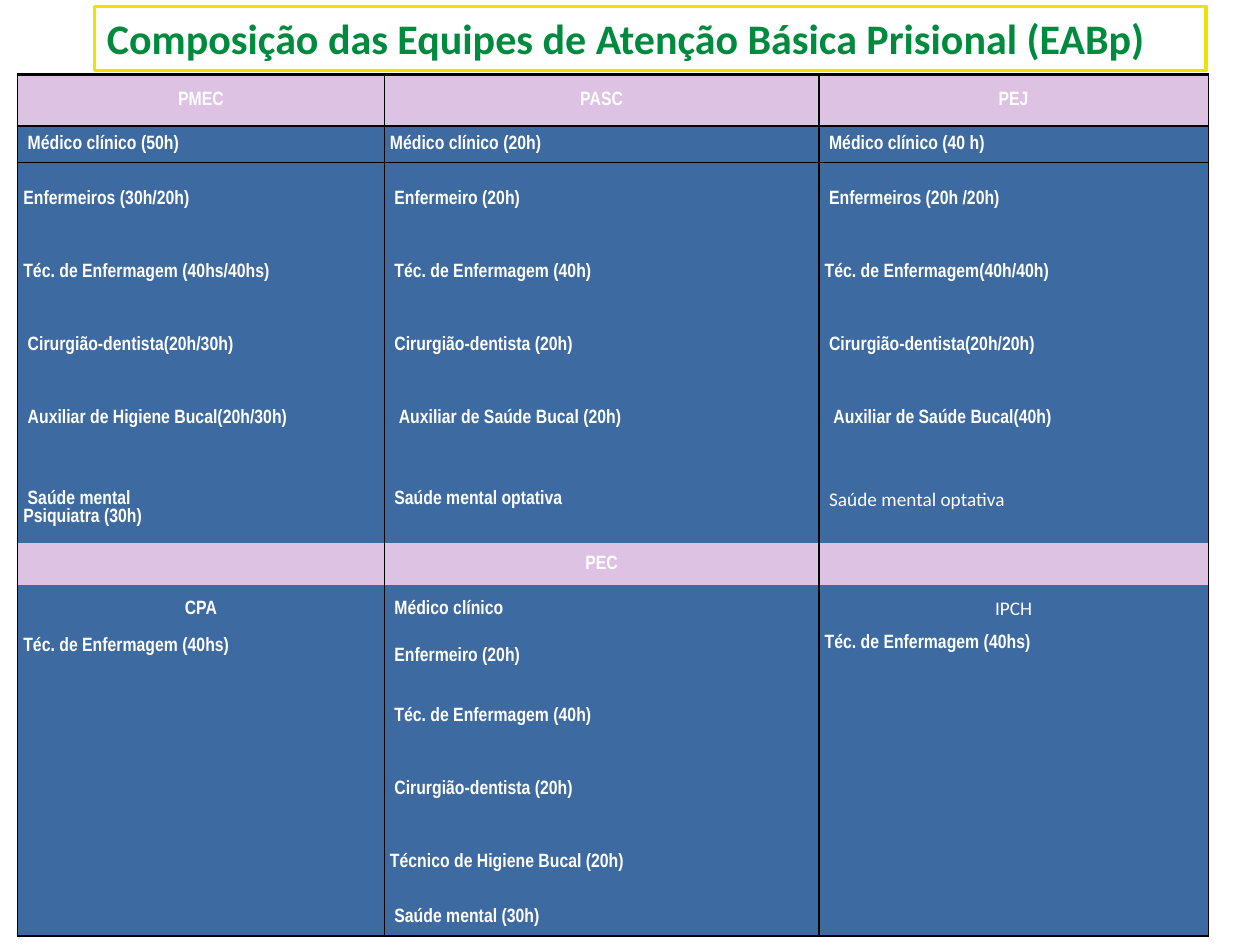
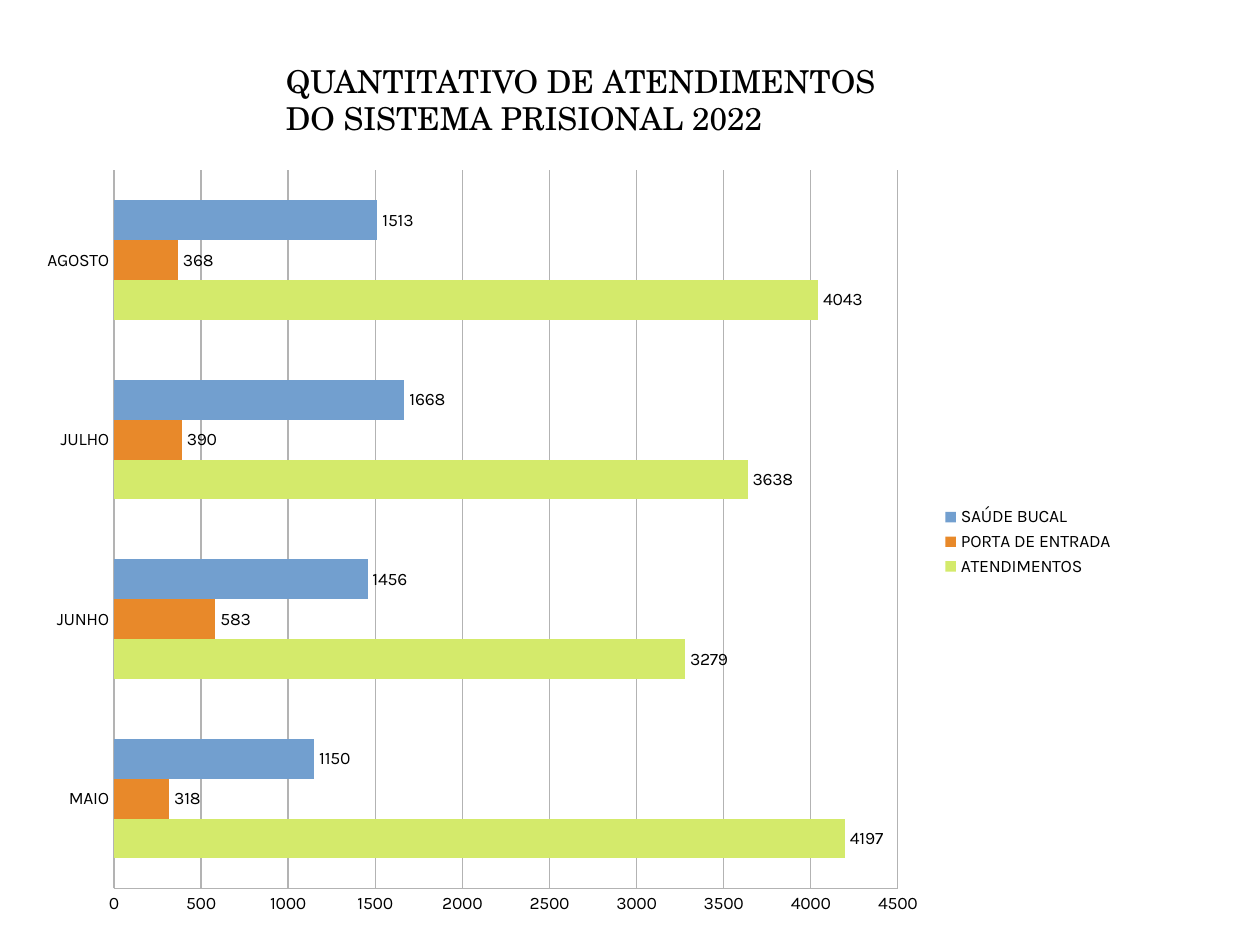
from lxml import etree
from pptx import Presentation
from pptx.chart.data import CategoryChartData
from pptx.dml.color import RGBColor
from pptx.enum.chart import XL_CHART_TYPE as CT, XL_LABEL_POSITION as LP
from pptx.enum.chart import XL_LEGEND_POSITION as LegendPos, XL_TICK_MARK as Tick
from pptx.enum.text import MSO_ANCHOR as Anchor, PP_ALIGN as Align
from pptx.oxml.ns import qn
from pptx.util import Inches, Pt

BLACK, WHITE, GREEN, YELLOW = "000000", "FFFFFF", "008A3E", "EAE400"
LILAC, BLUE, GREY = "DEC2E4", "3D6AA1", "B3B3B3"
BODY, NARROW, CHART_FONT, SERIF = "Calibri", "Arial Narrow", "Karla", "TeX Gyre Schola"
NO_STYLE = "{2D5ABB26-0587-4C30-8999-92F81FD0307C}"

TEAM_TITLE = "Composição das Equipes de Atenção Básica Prisional (EABp)"
COL_WIDTHS = [2.91, 3.45, 3.09]
CENTRED = 0
SPACE = 0.035
NURSE_TECH = ("Téc. de Enfermagem (40hs)", 1)
TEAM_ROWS = [
    (0.41, [("PMEC", CENTRED)], [("PASC", CENTRED)], [("PEJ", CENTRED)]),
    (0.29, [("Médico clínico (50h)", 2)], [("Médico clínico (20h)", 1)],
     [("Médico clínico (40 h)", 2)]),
    (0.58, [("Enfermeiros (30h/20h)", 1)], [("Enfermeiro (20h)", 2)],
     [("Enfermeiros (20h /20h)", 2)]),
    (0.58, [("Téc. de Enfermagem (40hs/40hs)", 1)], [("Téc. de Enfermagem (40h)", 2)],
     [("Téc. de Enfermagem(40h/40h)", 1)]),
    (0.58, [("Cirurgião-dentista(20h/30h)", 2)], [("Cirurgião-dentista (20h)", 2)],
     [("Cirurgião-dentista(20h/20h)", 2)]),
    (0.58, [("Auxiliar de Higiene Bucal(20h/30h)", 2)],
     [("Auxiliar de Saúde Bucal (20h)", 3)], [("Auxiliar de Saúde Bucal(40h)", 3)]),
    (0.7, [("Saúde mental", 2), ("Psiquiatra (30h)", 1)],
     [("Saúde mental optativa", 2)], [("Saúde mental optativa", 2)]),
    (0.33, [], [("PEC", CENTRED)], []),
    (0.38, [("CPA", CENTRED)], [("Médico clínico", 2)], [("IPCH", CENTRED)]),
    (0.37, [NURSE_TECH], [("Enfermeiro (20h)", 2)], [NURSE_TECH]),
    (0.58, [], [("Téc. de Enfermagem (40h)", 2)], []),
    (0.58, [], [("Cirurgião-dentista (20h)", 2)], []),
    (0.58, [], [("Técnico de Higiene Bucal (20h)", 1)], []),
    (0.3, [], [("Saúde mental (30h)", 2)], []),
]
HEADER_ROWS = {0, 7}
PLAIN_CELLS = {(6, 2), (8, 2)}
TOP_MARGINS = {(6, 0): 0.15}
BOTTOM_MARGINS = {(9, 0): 0.16, (9, 2): 0.2}

CARE_TITLE = "QUANTITATIVO DE ATENDIMENTOS DO SISTEMA PRISIONAL 2022"
MONTHS = ["MAIO", "JUNHO", "JULHO", "AGOSTO"]
CARE = [
    ("ATENDIMENTOS", "D4EA6B", [4197, 3279, 3638, 4043]),
    ("PORTA DE ENTRADA", "E8892A", [318, 583, 390, 368]),
    ("SAÚDE BUCAL", "729FCF", [1150, 1456, 1668, 1513]),
]


def rgb(color):
    return RGBColor.from_string(color)


def style_font(font, name, size, color, bold=False):
    font.name, font.size, font.bold = name, Pt(size), bold
    font.color.rgb = rgb(color)


def add_run(p, text, *style):
    r = p.add_run()
    r.text = text
    style_font(r.font, *style)


def add_title(slide, box, text, *style):
    sp = slide.shapes.add_textbox(*map(Inches, box))
    sp.text_frame.word_wrap = True
    add_run(sp.text_frame.paragraphs[0], text, *style)
    return sp


def add_border(cell, side, width):
    ln = etree.SubElement(cell._tc.get_or_add_tcPr(), qn(f"a:ln{side}"), w=str(Pt(width)))
    fill = etree.SubElement(ln, qn("a:solidFill"))
    etree.SubElement(fill, qn("a:srgbClr"), val=BLACK)


def fill_cell(cell, row, col, lines):
    borders = {"L": 1, "R": 1}
    if row < 2:
        borders["T"] = 2 - row
    if row in (0, len(TEAM_ROWS) - 1):
        borders["B"] = 1
    for side, width in borders.items():
        add_border(cell, side, width)
    cell.fill.solid()
    cell.fill.fore_color.rgb = rgb(LILAC if row in HEADER_ROWS else BLUE)
    cell.vertical_anchor = Anchor.MIDDLE
    cell.margin_left = cell.margin_right = Inches(0.01)
    cell.margin_top = Inches(TOP_MARGINS.get((row, col), 0.01))
    cell.margin_bottom = Inches(BOTTOM_MARGINS.get((row, col), 0))
    tf = cell.text_frame
    plain = (row, col) in PLAIN_CELLS
    for i, (text, indent) in enumerate(lines):
        p = tf.add_paragraph() if i else tf.paragraphs[0]
        if indent == CENTRED:
            p.alignment = Align.CENTER
        else:
            p._p.get_or_add_pPr().set("marL", str(Inches(indent * SPACE)))
        add_run(p, text, BODY if plain else NARROW, 11, WHITE, not plain)
    if not lines:
        etree.SubElement(tf.paragraphs[0]._p, qn("a:endParaRPr"), sz="1100")


def add_team_slide(prs):
    slide = prs.slides.add_slide(prs.slide_layouts[6])
    heights = [row[0] for row in TEAM_ROWS]
    box = (0.14, 0.59, sum(COL_WIDTHS), sum(heights))
    table = slide.shapes.add_table(len(heights), len(COL_WIDTHS), *map(Inches, box)).table
    table.first_row = table.horz_banding = False
    table._tbl.tblPr.find(qn("a:tableStyleId")).text = NO_STYLE
    for column, width in zip(table.columns, COL_WIDTHS):
        column.width = Inches(width)
    for row, (height, *cells) in enumerate(TEAM_ROWS):
        table.rows[row].height = Inches(height)
        for col, lines in enumerate(cells):
            fill_cell(table.cell(row, col), row, col, lines)
    title = add_title(slide, (0.75, 0.05, 8.82, 0.51), TEAM_TITLE, BODY, 24, GREEN, True)
    title.line.color.rgb = rgb(YELLOW)
    title.line.width = Pt(2)


def style_line(line):
    line.color.rgb = rgb(GREY)
    line.width = Pt(0.75)


def add_care_slide(prs):
    slide = prs.slides.add_slide(prs.slide_layouts[6])
    add_title(slide, (2.17, 0.44, 5, 1.01), CARE_TITLE, SERIF, 18, BLACK)
    data = CategoryChartData()
    data.categories = MONTHS
    for name, _, values in CARE:
        data.add_series(name, values)
    box = map(Inches, (0.2, 1.23, 8.74, 6.14))
    chart = slide.shapes.add_chart(CT.BAR_CLUSTERED, *box, data).chart
    style_font(chart.font, CHART_FONT, 10, BLACK)
    chart.has_title = False
    chart.has_legend = True
    chart.legend.position = LegendPos.RIGHT
    chart.legend.include_in_layout = False
    style_font(chart.legend.font, CHART_FONT, 10, BLACK)
    for axis in (chart.category_axis, chart.value_axis):
        axis.major_tick_mark = axis.minor_tick_mark = Tick.NONE
        style_line(axis.format.line)
        style_font(axis.tick_labels.font, CHART_FONT, 10, BLACK)
    values = chart.value_axis
    values.minimum_scale, values.maximum_scale, values.major_unit = 0, 4500, 500
    values.has_major_gridlines = True
    style_line(values.major_gridlines.format.line)
    plot = chart.plots[0]
    plot.gap_width, plot.overlap, plot.vary_by_categories = 150, 0, False
    for series, (_, color, _) in zip(plot.series, CARE):
        series.format.fill.solid()
        series.format.fill.fore_color.rgb = rgb(color)
        labels = series.data_labels
        labels.show_value = True
        labels.position = LP.OUTSIDE_END
        style_font(labels.font, CHART_FONT, 10, BLACK)


def main():
    prs = Presentation()
    prs.slide_width, prs.slide_height = Inches(10), Inches(7.5)
    add_team_slide(prs)
    add_care_slide(prs)
    prs.save("out.pptx")


if __name__ == "__main__":
    main()
